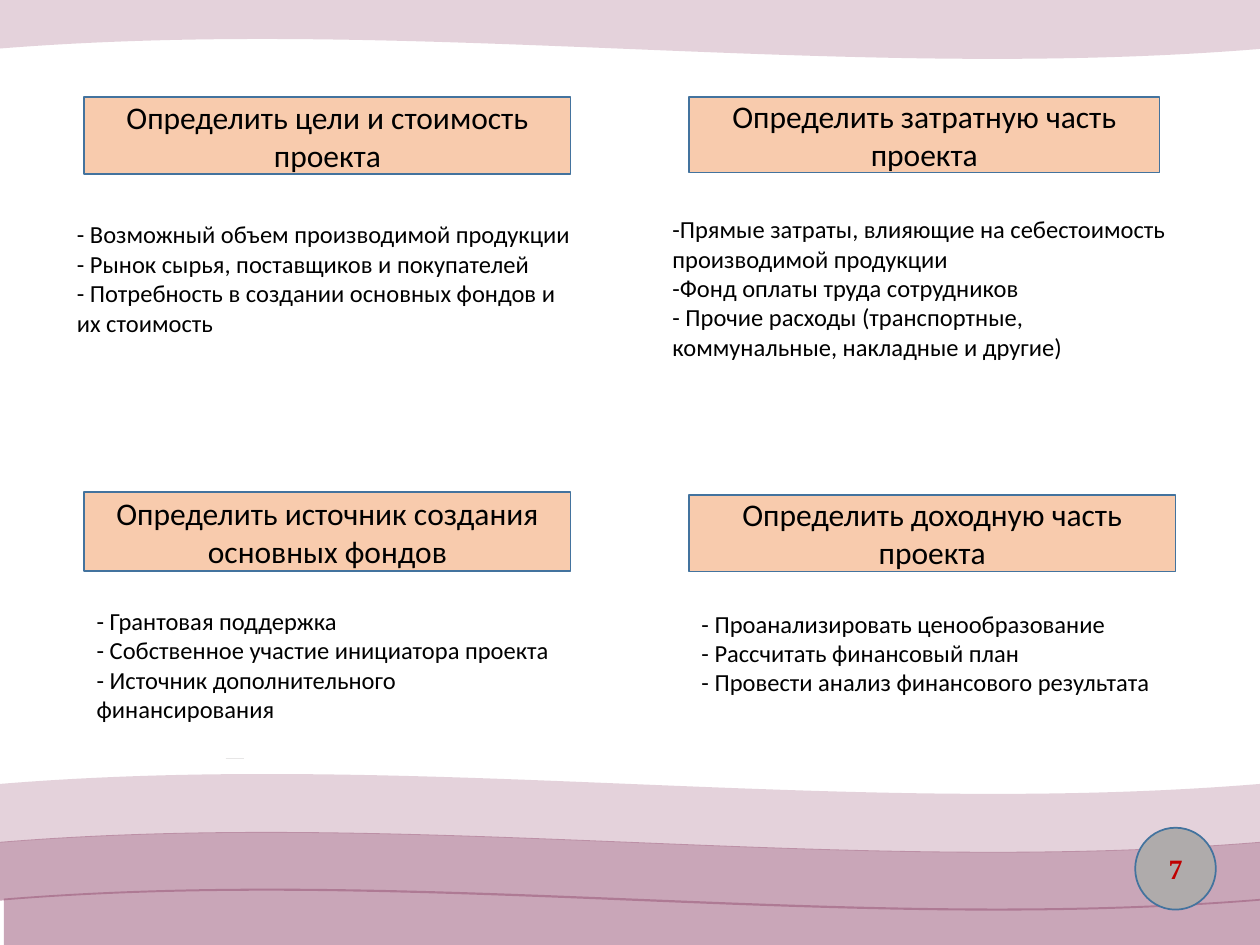
from lxml import etree
from pptx import Presentation
from pptx import util as u
from pptx.dml.color import RGBColor
from pptx.enum import shapes, text
from pptx.oxml import ns

Pt = u.Pt


class Theme:
    wave = RGBColor.from_string("954F72")
    heading = RGBColor.from_string("F8CBAD")
    outline = RGBColor.from_string("43739E")
    badge = RGBColor.from_string("AFABAB")
    number = RGBColor.from_string("C00000")
    dash = RGBColor.from_string("E7E6E6")
    ink = RGBColor.from_string("000000")
    heading_size, list_size, number_size = 18, 14, 16
    font, number_font = "Calibri", "Times New Roman"


def write(tf, lines, size, color=Theme.ink, font=Theme.font, bold=False,
          align=text.PP_ALIGN.LEFT, anchor=text.MSO_ANCHOR.TOP,
          fit=text.MSO_AUTO_SIZE.NONE):
    tf.word_wrap = True
    tf.auto_size = fit
    tf.vertical_anchor = anchor
    for i, line in enumerate(lines):
        p = tf.add_paragraph() if i else tf.paragraphs[0]
        p.text = line
        p.alignment = align
        p.space_before = Pt(0)
        for r in p.runs:
            r.font.size = Pt(size)
            r.font.name = font
            r.font.bold = bold
            r.font.color.rgb = color


def add_box(s, kind, box, fill, line=None):
    sp = s.shapes.add_shape(kind, *map(Pt, box))
    sp.shadow.inherit = False
    sp.fill.solid()
    sp.fill.fore_color.rgb = fill
    if line is None:
        sp.line.fill.background()
    else:
        sp.line.color.rgb = line
        sp.line.width = Pt(1)
    return sp


prs = Presentation()
prs.slide_width, prs.slide_height = Pt(720), Pt(540)
s = prs.slides.add_slide(prs.slide_layouts[3])
title = s.shapes.title
title.element.getparent().remove(title.element)
bodies = list(s.placeholders)

waves = [(-2.9, -11.5, 722.9, 25), (0, 442.1, 720, 25),
         (0, 475.2, 720, 50), (2.2, 507.6, 720, 50)]
for left, top, width, opacity in waves:
    sp = add_box(s, shapes.MSO_SHAPE.WAVE, (left, top, width, 45.4), Theme.wave)
    sp.adjustments[0] = 0.13
    color = sp.fill._xPr.find(".//" + ns.qn("a:srgbClr"))
    etree.SubElement(color, ns.qn("a:alpha")).set("val", str(opacity * 1000))

dash = s.shapes.add_connector(shapes.MSO_CONNECTOR.STRAIGHT,
                              Pt(128.9), Pt(433.4), Pt(139.7), Pt(433.4))
dash.line.color.rgb = Theme.dash
dash.line.width = Pt(0.75)
etree.SubElement(dash.element.spPr, ns.qn("a:effectLst"))

badge = add_box(s, shapes.MSO_SHAPE.OVAL, (648.7, 473, 46.1, 46.8),
                Theme.badge, Theme.outline)
write(badge.text_frame, ["7"], Theme.number_size, color=Theme.number,
      font=Theme.number_font, bold=True, align=text.PP_ALIGN.CENTER,
      anchor=text.MSO_ANCHOR.MIDDLE)

steps = [
    ("Определить цели и стоимость проекта",
     (48.2, 55.4, 277.9, 44.2), (36.7, 121.7, 306, 74.9),
     ["- Возможный объем производимой продукции",
      "- Рынок сырья, поставщиков и покупателей",
      "- Потребность в создании основных фондов и\vих стоимость"]),
    ("Определить затратную часть проекта",
     (393.8, 55.4, 268.9, 43.2), (377, 118.8, 300.2, 108.7),
     ["-Прямые затраты, влияющие на себестоимость производимой продукции",
      "-Фонд оплаты труда сотрудников",
      "- Прочие расходы (транспортные, коммунальные, накладные и другие)"]),
    ("Определить источник создания основных фондов",
     (48.2, 281.3, 277.9, 45.2), (48.2, 342.7, 277.9, 74.9),
     ["- Грантовая поддержка",
      "- Собственное участие инициатора проекта",
      "- Источник дополнительного финансирования"]),
    ("Определить доходную часть проекта",
     (393.8, 282.7, 277.9, 43.9), (393.8, 344.2, 277.9, 58.3),
     ["- Проанализировать ценообразование",
      "- Рассчитать финансовый план",
      "- Провести анализ финансового результата"]),
]
for i, (heading, heading_box, list_box, lines) in enumerate(steps):
    sp = add_box(s, shapes.MSO_SHAPE.RECTANGLE, heading_box,
                 Theme.heading, Theme.outline)
    write(sp.text_frame, [heading], Theme.heading_size,
          align=text.PP_ALIGN.CENTER, anchor=text.MSO_ANCHOR.MIDDLE)
    if i < len(bodies):
        sp = bodies[i]
        sp.left, sp.top, sp.width, sp.height = map(Pt, list_box)
    else:
        sp = s.shapes.add_textbox(*map(Pt, list_box))
    write(sp.text_frame, lines, Theme.list_size,
          fit=text.MSO_AUTO_SIZE.SHAPE_TO_FIT_TEXT)
    for p in sp.text_frame.paragraphs:
        pPr = p._p.get_or_add_pPr()
        pPr.set("marL", "0")
        pPr.set("indent", "0")
        etree.SubElement(pPr, ns.qn("a:buNone"))

prs.save("out.pptx")
